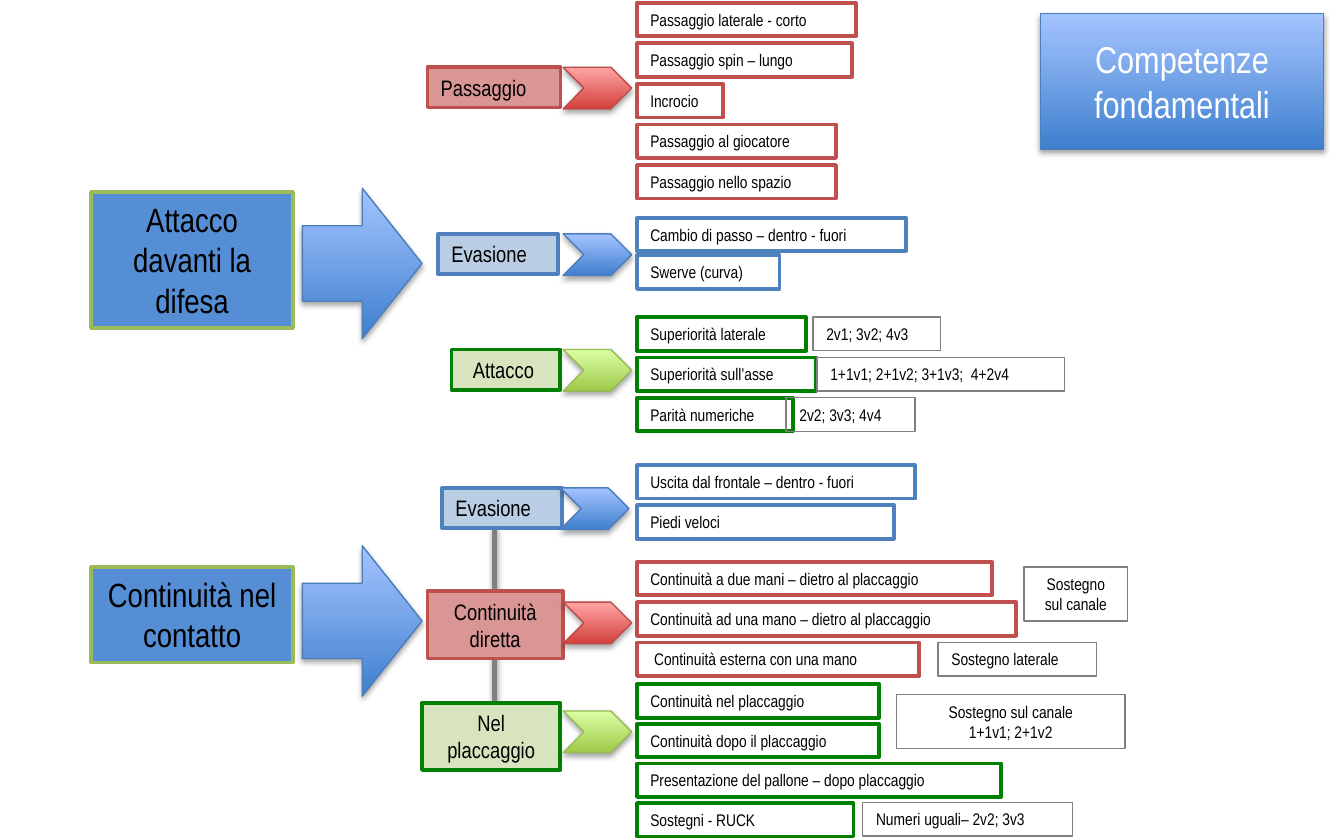
from lxml.etree import SubElement
from pptx import Presentation
from pptx.dml.color import RGBColor
from pptx.enum.shapes import MSO_CONNECTOR, MSO_SHAPE
from pptx.enum.text import MSO_ANCHOR, MSO_AUTO_SIZE, PP_ALIGN
from pptx.oxml.ns import qn
from pptx.util import Inches, Pt

HUES = {
    "red": {"edge": "C0504D", "pale": "D99694", "dark": "D1403C", "light": "FFA6A5", "rim": "BF4C48"},
    "blue": {"edge": "4F81BD", "pale": "B9CDE5", "dark": "3F80CE", "light": "A4C4FF", "rim": "4B7EBC"},
    "green": {"edge": "008000", "pale": "D7E4BD", "dark": "A0CA4A", "light": "DAFFA5", "rim": "98B955"},
}
TONES = {"black": "000000", "white": "FFFFFF", "gray": "808080", "sky": "558ED5", "olive": "9BBB59"}
LEFT, MID = PP_ALIGN.LEFT, PP_ALIGN.CENTER

THEMES = [
    ("Attacco davanti la difesa", 14.3, 10.1, 14),
    ("Continuità nel contatto", 42.2, 7.1, 40.6),
]

GROUPS = [
    ("red", "Passaggio", (31.8, 5, 9.9, 3), LEFT, (41.9, 5), 0.2, 3.02, [
        ("Passaggio laterale - corto", 16.3),
        ("Passaggio spin – lungo", 16),
        ("Incrocio", 6.4),
        ("Passaggio al giocatore", 14.8),
        ("Passaggio nello spazio", 14.8)]),
    ("blue", "Evasione", (32.6, 17.4, 8.9, 3), LEFT, (41.9, 17.4), 16.2, 2.8, [
        ("Cambio di passo – dentro - fuori", 20),
        ("Swerve (curva)", 10.6)]),
    ("green", "Attacco ", (33.6, 26, 8.1, 3), MID, (41.9, 26), 23.6, 3, [
        ("Superiorità laterale", 12.6),
        ("Superiorità sull’asse", 13.3),
        ("Parità numeriche", 11.6)]),
    ("blue", "Evasione", (32.9, 36.3, 8.9, 3), LEFT, (41.7, 36.3), 34.6, 3, [
        ("Uscita dal frontale – dentro - fuori", 20.7),
        ("Piedi veloci", 19.1)]),
    ("red", "Continuità diretta", (31.8, 44, 10.1, 5), MID, (41.9, 44.8), 41.8, 3, [
        ("Continuità a due mani – dietro al placcaggio", 26.4),
        ("Continuità ad una mano – dietro al placcaggio", 28.2),
        (" Continuità esterna con una mano", 21)]),
    ("green", "Nel placcaggio", (31.4, 52.3, 10.3, 5), MID, (41.9, 52.9), 50.9, 2.95, [
        ("Continuità nel placcaggio", 18),
        ("Continuità dopo il placcaggio", 18),
        ("Presentazione del pallone – dopo placcaggio", 27.1),
        ("Sostegni - RUCK", 16.1)]),
]

NOTES = [
    (["2v1; 3v2; 4v3"], (60.5, 23.6, 9.5, 2.5), LEFT),
    (["1+1v1; 2+1v2; 3+1v3;  4+2v4"], (60.8, 26.6, 18.4, 2.5), LEFT),
    (["2v2; 3v3; 4v4"], (58.5, 29.6, 9.6, 2.5), LEFT),
    (["Sostegno sul canale"], (76.2, 42.2, 7.7, 4), MID),
    (["Sostegno laterale"], (69.8, 47.8, 11.8, 2.5), LEFT),
    (["Sostegno sul canale", "1+1v1; 2+1v2"], (66.7, 51.7, 17, 4), MID),
    (["Numeri uguali– 2v2; 3v3"], (64.2, 59.7, 15.6, 2.5), LEFT),
]


class Board:
    """Style and slide, measured on a grid of 100 columns by 62.5 rows."""

    font = "Arial Narrow"

    def __init__(self, deck):
        self.cell = deck.slide_width / 100
        self.slide = deck.slides.add_slide(deck.slide_layouts[5])
        self.shapes = self.slide.shapes

    def span(self, *cells):
        return [round(n * self.cell) for n in cells]

    def edge(self, shape, tone, width):
        shape.line.color.rgb = RGBColor.from_string(tone)
        shape.line.width = Pt(width)

    def shade(self, shape, alpha=35, drop=1.8):
        group = SubElement(shape._element.spPr, qn("a:effectLst"))
        glow = SubElement(group, qn("a:outerShdw"), blurRad=str(Pt(3.1)),
                          dist=str(Pt(drop)), dir="5400000", rotWithShape="0")
        tone = SubElement(glow, qn("a:srgbClr"), val=TONES["black"])
        SubElement(tone, qn("a:alpha"), val=str(alpha * 1000))

    def gloss(self, shape, hue):
        shape.fill.gradient()
        shape.fill.gradient_angle = 90
        for stop, key in zip(shape.fill.gradient_stops, ("dark", "light")):
            stop.color.rgb = RGBColor.from_string(HUES[hue][key])
        self.edge(shape, HUES[hue]["rim"], 0.75)
        self.shade(shape)

    def label(self, frame, lines, size, align, tone="black"):
        frame.word_wrap = True
        for i, line in enumerate(lines):
            para = frame.add_paragraph() if i else frame.paragraphs[0]
            para.alignment = align
            run = para.add_run()
            run.text = line
            run.font.name, run.font.size = self.font, Pt(size)
            run.font.color.rgb = RGBColor.from_string(TONES[tone])

    def box(self, lines, area, size, align, rim, fill=None, width=2):
        shape = self.shapes.add_shape(MSO_SHAPE.RECTANGLE, *self.span(*area))
        shape.shadow.inherit = False
        if fill:
            shape.fill.solid()
            shape.fill.fore_color.rgb = RGBColor.from_string(fill)
        else:
            shape.fill.background()
        self.edge(shape, rim, width)
        frame = shape.text_frame
        frame.vertical_anchor = MSO_ANCHOR.TOP
        frame.auto_size = MSO_AUTO_SIZE.SHAPE_TO_FIT_TEXT
        self.label(frame, lines, size, align)

    def arrow(self, kind, area, hue):
        self.gloss(self.shapes.add_shape(kind, *self.span(*area)), hue)

    def stem(self, *ends):
        line = self.shapes.add_connector(MSO_CONNECTOR.STRAIGHT, *self.span(*ends))
        self.edge(line, TONES["gray"], 3)
        self.shade(line, 38, 1.6)

    def title(self, text, area):
        head = self.shapes.title
        head.left, head.top, head.width, head.height = self.span(*area)
        form = SubElement(head._element.spPr, qn("a:prstGeom"), prst="roundRect")
        SubElement(form, qn("a:avLst"))
        self.gloss(head, "blue")
        head.text_frame.auto_size = MSO_AUTO_SIZE.NONE
        head.text_frame.vertical_anchor = MSO_ANCHOR.MIDDLE
        self.label(head.text_frame, [text], 20, MID, "white")


def main():
    deck = Presentation()
    deck.slide_width, deck.slide_height = Inches(10), Inches(6.25)
    board = Board(deck)
    board.title("Competenze fondamentali", (77.4, 1, 21.1, 10.1))
    board.stem(36.8, 39.2, 36.8, 52.3)
    for text, top, tall, tip in THEMES:
        board.box([text], (6.8, top, 15, tall), 18, MID, TONES["olive"], TONES["sky"])
        board.arrow(MSO_SHAPE.RIGHT_ARROW, (22.5, tip, 8.9, 11.2), "blue")
    for hue, name, area, align, tip, top, step, items in GROUPS:
        rim = HUES[hue]["edge"]
        board.box([name], area, 12, align, rim, HUES[hue]["pale"])
        board.arrow(MSO_SHAPE.CHEVRON, (*tip, 5.1, 3.1), hue)
        for row, (text, wide) in enumerate(items):
            spot = (47.4, top + row * step, wide, 2.5)
            board.box([text], spot, 9, LEFT, rim, TONES["white"])
    for lines, area, align in NOTES:
        board.box(lines, area, 9, align, TONES["gray"], width=0.75)
    deck.save("out.pptx")


if __name__ == "__main__":
    main()
